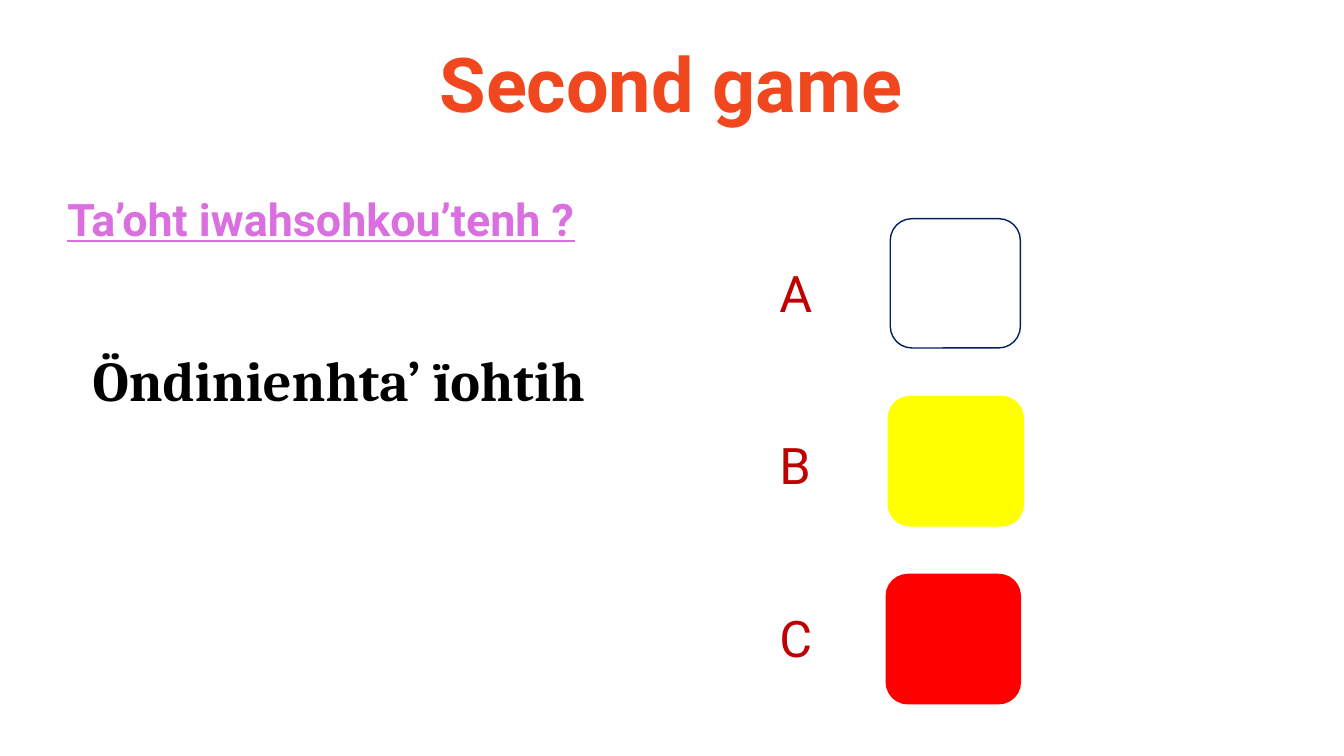
from dataclasses import dataclass
from pptx import Presentation
from pptx.dml.color import RGBColor as RGB
from pptx.enum.shapes import MSO_SHAPE as Form
from pptx.enum.text import MSO_ANCHOR as Anchor, MSO_AUTO_SIZE as Fit, PP_ALIGN as Align
from pptx.oxml.xmlchemy import OxmlElement as Node
from pptx.util import Inches, Pt


@dataclass(frozen=True)
class Theme:
    wide: int = Inches(13.33)
    high: int = Inches(7.5)
    sans: str = "Roboto"
    serif: str = "Cambria"
    orange: str = "F1471F"
    pink: str = "DA6FDF"
    black: str = "000000"
    crimson: str = "C00000"
    navy: str = "002060"
    white: str = "FFFFFF"
    yellow: str = "FFFF00"
    red: str = "FF0000"
    title: int = 54
    prompt: int = 32
    phrase: int = 40
    letter: int = 36


T = Theme()


def area(left, top, width, height):
    return [int(T.wide * left / 100), int(T.high * top / 100),
            int(T.wide * width / 100), int(T.high * height / 100)]


def place(shape, box):
    shape.left, shape.top, shape.width, shape.height = area(*box)


def write(shape, lines, face, size, color, bold=False, line=False,
          align=Align.LEFT, anchor=Anchor.TOP, gap=0, lead=1.0):
    frame = shape.text_frame
    frame.text = "\n".join(lines)
    frame.word_wrap = True
    frame.auto_size = Fit.NONE
    frame.vertical_anchor = anchor
    for index, para in enumerate(frame.paragraphs):
        para.alignment = align
        para.line_spacing = lead
        para.space_before = Pt(gap if index else 0)
        props = para._p.get_or_add_pPr()
        props.set("marL", "0")
        props.set("indent", "0")
        props.append(Node("a:buNone"))
        font = para.font
        font.name, font.size, font.bold = face, Pt(size), bold
        font.underline = line
        font.color.rgb = RGB.from_string(color)


def label(slide, box, text, *style, **more):
    write(slide.shapes.add_textbox(*area(*box)), [text], *style, **more)


def card(slide, box, fill, edge):
    shape = slide.shapes.add_shape(Form.ROUNDED_RECTANGLE, *area(*box))
    shape.shadow.inherit = False
    shape.fill.solid()
    shape.fill.fore_color.rgb = RGB.from_string(fill)
    shape.line.color.rgb = RGB.from_string(edge)
    shape.line.width = Pt(1)


def main():
    deck = Presentation()
    deck.slide_width, deck.slide_height = T.wide, T.high
    slide = deck.slides.add_slide(deck.slide_layouts[1])
    title, body = slide.placeholders

    place(title, (8.7, 0, 82.5, 17.73))
    write(title, ["Second game"], T.sans, T.title, T.orange, bold=True,
          align=Align.CENTER, anchor=Anchor.BOTTOM, lead=0.9)
    label(slide, (4.28, 24.67, 53.86, 8.53), "Ta’oht iwahsohkou’tenh ?",
          T.sans, T.prompt, T.pink, bold=True, line=True)
    label(slide, (3.6, 45.07, 43.2, 14.67), "Öndinienhta’ ïohtih",
          T.serif, T.phrase, T.black, bold=True, align=Align.CENTER)
    place(body, (57.24, 34, 35.86, 66))
    write(body, "ABC", T.sans, T.letter, T.crimson, gap=80)

    cards = [(66.24, 9.68, T.white, T.navy),
             (66.09, 10.05, T.yellow, T.yellow),
             (65.94, 9.98, T.red, T.red)]
    for row, (left, width, fill, edge) in enumerate(cards):
        card(slide, (left, 28.93 + 23.53 * row, width, 17.1), fill, edge)

    deck.save("out.pptx")


if __name__ == "__main__":
    main()
